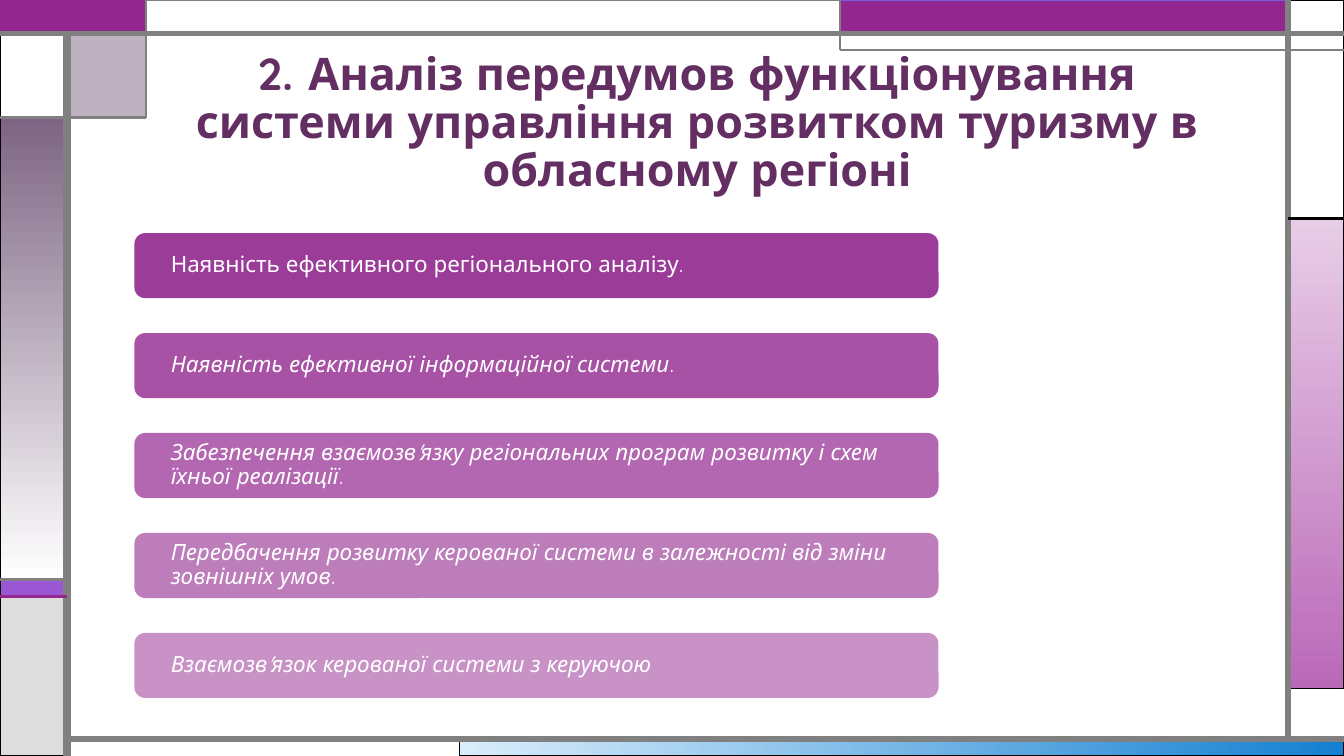
from itertools import cycle

from lxml import etree
from pptx import Presentation
from pptx.dml.color import RGBColor
from pptx.enum.shapes import MSO_CONNECTOR as Connector, MSO_SHAPE as Shape
from pptx.enum.text import MSO_ANCHOR as Anchor, PP_ALIGN as Align
from pptx.oxml.ns import qn
from pptx.util import Inches, Pt

COLORS = {
    "purple": "92278F", "plum": "632E62", "mauve": "7E6583", "violet": "9B57D3",
    "indigo": "755DD9", "pink": "E8CDE7", "orchid": "BA69B8", "sky": "DAEDFB",
    "blue": "1480D1", "light": "DDDDDD", "gray": "808080",
    "white": "FFFFFF", "black": "000000",
}
COLUMNS, ROWS = 120, 90


class SlideBuilder:
    """Draws on one slide; every position is in columns and rows of its grid."""

    font_name = "Quicksand"

    def __init__(self, deck):
        self.slide = deck.slides.add_slide(deck.slide_layouts[6])
        self.units = deck.slide_width / COLUMNS, deck.slide_height / ROWS

    def place(self, *lengths):
        """Turn alternating columns and rows into slide lengths."""
        return [round(n * unit) for n, unit in zip(lengths, cycle(self.units))]

    def color(self, name):
        return RGBColor.from_string(COLORS[name])

    def blend(self, fill, names, angle):
        fill.gradient()
        fill.gradient_angle = angle
        for stop, name in zip(fill.gradient_stops, names):
            stop.color.rgb = self.color(name)

    def panel(self, box, fill, opacity=100, angle=270, outline="black",
              weight=0.75, kind=Shape.RECTANGLE):
        """A filled shape; a tuple of two colours makes a gradient."""
        panel = self.slide.shapes.add_shape(kind, *self.place(*box))
        panel.shadow.inherit = False
        if isinstance(fill, tuple):
            self.blend(panel.fill, fill, angle)
        else:
            panel.fill.solid()
            panel.fill.fore_color.rgb = self.color(fill)
        if opacity < 100:
            hue = panel._element.spPr.find(".//" + qn("a:srgbClr"))
            etree.SubElement(hue, qn("a:alpha"), val=str(opacity * 1000))
        if outline:
            panel.line.color.rgb = self.color(outline)
            panel.line.width = Pt(weight)
        else:
            panel.line.fill.background()
        return panel

    def rule(self, start, end, weight, color="gray"):
        rule = self.slide.shapes.add_connector(
            Connector.STRAIGHT, *self.place(*start, *end))
        rule.line.color.rgb = self.color(color)
        rule.line.width = Pt(weight)
        etree.SubElement(rule._element.spPr, qn("a:effectLst"))

    def set_text(self, frame, runs, size, color="white", bold=False,
                 align=Align.LEFT, anchor=Anchor.MIDDLE, insets=(0.1, 0.05)):
        """Fill a text frame with one paragraph of (text, italic) runs."""
        frame.word_wrap = True
        frame.vertical_anchor = anchor
        frame.margin_left = frame.margin_right = Inches(insets[0])
        frame.margin_top = frame.margin_bottom = Inches(insets[1])
        paragraph = frame.paragraphs[0]
        paragraph.alignment = align
        paragraph.line_spacing = 0.9
        for text, italic in runs:
            run = paragraph.add_run()
            run.text = text
            run.font.name = self.font_name
            run.font.size = Pt(size)
            run.font.bold = bold
            run.font.italic = italic
            run.font.color.rgb = self.color(color)

    def title(self, box, text):
        heading = self.slide.shapes.add_textbox(*self.place(*box))
        self.set_text(heading.text_frame, [(text, False)], 32, color="plum",
                      bold=True, align=Align.CENTER, anchor=Anchor.BOTTOM)

    def bar(self, box, runs, opacity):
        bar = self.panel(box, "purple", opacity, outline=None,
                         kind=Shape.ROUNDED_RECTANGLE)
        self.set_text(bar.text_frame, runs, 16, insets=(0.33, 0.03))


PANELS = [
    ((41, 88, 79, 2), ("sky", "blue"), {"angle": 0}),
    ((115, 26, 5, 56), ("pink", "orchid"), {}),
    ((0, 69, 6, 2), "violet", {}),
    ((0, 71, 6, 19), "light", {}),
    ((115, 0, 5, 26), "white", {}),
    ((75, 0, 40, 4), "purple", {"outline": "indigo"}),
    ((6, 4, 7, 10), "mauve", {"opacity": 50}),
    ((0, 14, 6, 55), ("mauve", "white"), {}),
    ((0, 4, 6, 10), "white", {}),
    ((0, 0, 13, 4), "purple", {"outline": "purple", "weight": 1.5}),
    ((13, 0, 62, 4), "white", {"outline": "gray"}),
]
RULES = [
    ((6, 90), (6, 4), 6),
    ((6, 88), (120, 88), 4.5),
    ((115, 88), (115, 0), 4.5),
    ((0, 4), (120, 4), 3),
    ((120, 6), (75, 6), 1.5),
    ((75, 6), (75, 0), 1.5),
    ((115, 26), (120, 26), 2.25, "black"),
    ((13, 0), (13, 14), 1.5),
    ((13, 14), (0, 14), 2.25),
    ((6, 69), (0, 69), 2.25),
    ((6, 71), (0, 71), 2.25, "purple"),
]
PREMISES = [
    [("Наявність ефективного регіонального аналізу.", False)],
    [("Наявність ефективної інформаційної системи", True), (".", False)],
    [("Забезпечення взаємозв'язку регіональних програм розвитку і схем "
      "їхньої реалізації.", True)],
    [("Передбачення розвитку керованої системи в залежності від зміни "
      "зовнішніх умов.", True)],
    [("Взаємозв'язок керованої системи з керуючою", True)],
]


def main():
    deck = Presentation()
    deck.slide_width, deck.slide_height = Inches(13.33), Inches(7.5)
    builder = SlideBuilder(deck)
    for box, fill, style in PANELS:
        builder.panel(box, fill, **style)
    for rule in RULES:
        builder.rule(*rule)
    builder.title((15, 9, 94.5, 15),
                  "2.\tАналіз передумов функціонування системи управління "
                  "розвитком туризму в обласному регіоні")
    for i, runs in enumerate(PREMISES):
        builder.bar((12, 27.75 + 11.9 * i, 71.8, 7.75), runs, 90 - 10 * i)
    deck.save("out.pptx")


if __name__ == "__main__":
    main()
